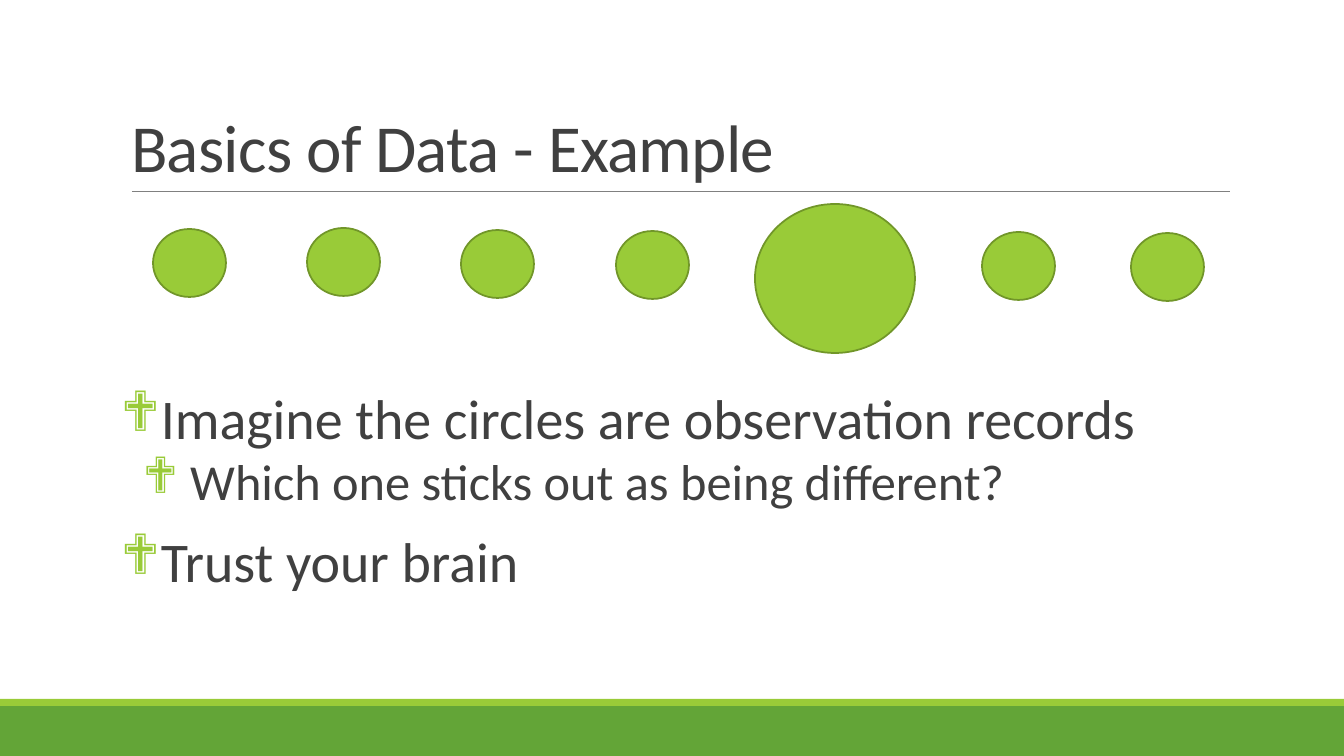
from dataclasses import dataclass

from lxml.etree import SubElement
from pptx import Presentation
from pptx.dml.color import RGBColor
from pptx.enum.shapes import MSO_CONNECTOR as Connector, MSO_SHAPE as Shape
from pptx.enum.text import MSO_ANCHOR as Anchor, MSO_AUTO_SIZE as AutoSize, PP_ALIGN as Align
from pptx.oxml.ns import qn
from pptx.util import Pt

PAGE_WIDTH, PAGE_HEIGHT = 1344, 756
SCALE = 12192000 / PAGE_WIDTH


@dataclass(frozen=True)
class Theme:
    font: str = "Calibri"
    text: str = "404040"
    rule: str = "808080"
    band: str = "63A537"
    accent: str = "99CB38"
    outline: str = "719629"
    title_size: int = 48
    body_sizes: tuple = (40, 36)


def emu(px):
    return round(px * SCALE)


def rgb(code):
    return RGBColor.from_string(code)


class SlideBuilder:
    def __init__(self, page, theme):
        self.page = page
        self.theme = theme

    def format_runs(self, para, size):
        for span in para.runs:
            span.font.name = self.theme.font
            span.font.size = Pt(size)
            span.font.color.rgb = rgb(self.theme.text)

    def title(self, text, left, top, width, height):
        box = self.page.shapes.title
        box.left, box.top, box.width, box.height = map(emu, (left, top, width, height))
        frame = box.text_frame
        frame.text = text
        frame.auto_size = AutoSize.NONE
        frame.vertical_anchor = Anchor.BOTTOM
        para = frame.paragraphs[0]
        para.alignment = Align.LEFT
        para.line_spacing = 0.85
        self.format_runs(para, self.theme.title_size)
        para.runs[0].font._element.set("spc", "-50")

    def shape(self, kind, left, top, width, height, fill, outline=None):
        shape = self.page.shapes.add_shape(kind, *map(emu, (left, top, width, height)))
        shape.shadow.inherit = False
        shape.fill.solid()
        shape.fill.fore_color.rgb = rgb(fill)
        if outline:
            shape.line.color.rgb = rgb(outline)
            shape.line.width = Pt(1.25)
        else:
            shape.line.fill.background()

    def circle(self, left, top, width, height):
        self.shape(Shape.OVAL, left, top, width, height, self.theme.accent, self.theme.outline)

    def rule(self, left, right, y):
        line = self.page.shapes.add_connector(Connector.STRAIGHT, *map(emu, (left, y, right, y)))
        line.line.color.rgb = rgb(self.theme.rule)
        line.line.width = Pt(0.5)
        SubElement(line._element.spPr, qn("a:effectLst"))

    def bullet(self, para, margin, hanging):
        properties = para._p.get_or_add_pPr()
        properties.set("marL", str(emu(margin)))
        properties.set("indent", str(-emu(hanging)))
        color = SubElement(properties, qn("a:buClr"))
        SubElement(color, qn("a:srgbClr"), val=self.theme.accent)
        SubElement(properties, qn("a:buFont"), typeface="Wingdings")
        SubElement(properties, qn("a:buChar"), char="❖")

    def bullet_list(self, items, left, top, width, height):
        """Add a text box from (level, text) pairs."""
        box = self.page.shapes.add_textbox(*map(emu, (left, top, width, height)))
        frame = box.text_frame
        frame.word_wrap = True
        frame.margin_left = frame.margin_right = frame.margin_top = frame.margin_bottom = 0
        frame.text = "\n".join(text for level, text in items)
        spacing = ((12, 2), (2, 4))
        indents = ((10, 10), (42, 20))
        for index, (para, (level, text)) in enumerate(zip(frame.paragraphs, items)):
            before, after = spacing[level]
            para.level = level
            para.line_spacing = 0.9
            para.space_before = Pt(before if index else 0)
            para.space_after = Pt(after)
            self.bullet(para, *indents[level])
            self.format_runs(para, self.theme.body_sizes[level])


def main():
    deck = Presentation()
    deck.slide_width, deck.slide_height = emu(PAGE_WIDTH), emu(PAGE_HEIGHT)
    theme = Theme()
    slide = SlideBuilder(deck.slides.add_slide(deck.slide_layouts[5]), theme)

    slide.shape(Shape.RECTANGLE, 0, 706, PAGE_WIDTH, 50, theme.band)
    slide.shape(Shape.RECTANGLE, 0, 699, PAGE_WIDTH, 7, theme.accent)
    slide.rule(132, 1230, 191)
    slide.title("Basics of Data - Example", 121, 31, 1109, 160)
    slide.bullet_list(
        [
            (0, "Imagine the circles are observation records"),
            (1, " Which one sticks out as being different?"),
            (0, "Trust your brain"),
        ],
        121, 391, 1109, 256,
    )

    record_corners = [(153, 229), (307, 228), (461, 230), (616, 231), (982, 232), (1131, 233)]
    for left, top in record_corners:
        slide.circle(left, top, 73, 68)
    slide.circle(755, 204, 160, 149)

    deck.save("out.pptx")


if __name__ == "__main__":
    main()
